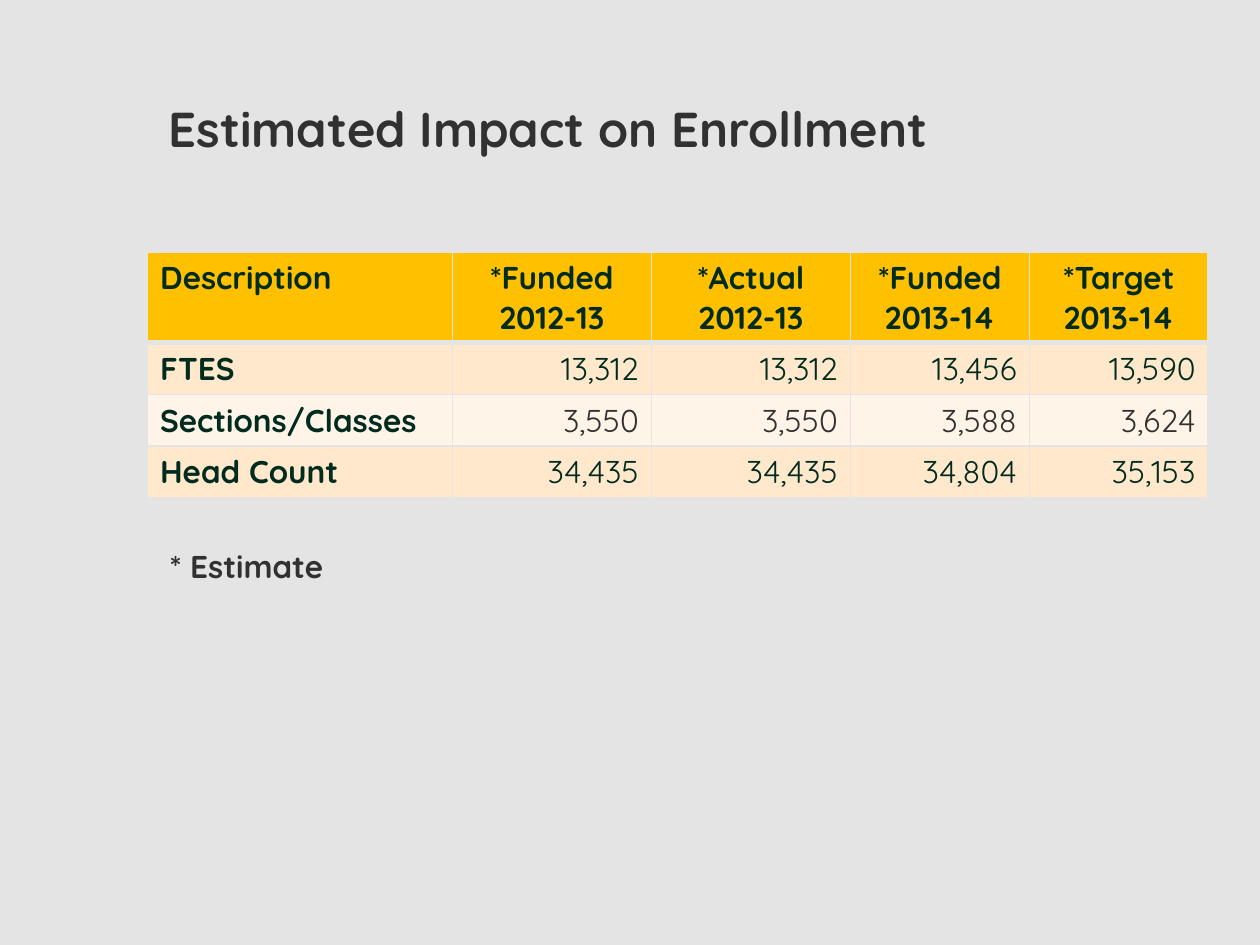
from dataclasses import dataclass

import lxml.etree
import pptx
import pptx.dml.color
import pptx.enum.text
import pptx.oxml.ns
import pptx.util

Inches = pptx.util.Inches
ALIGN = pptx.enum.text.PP_ALIGN

FONT = "Quicksand"
BACKGROUND = "E4E4E4"
GREY = "313131"
GREEN = "012B1E"
HEADER_FILL = "FFC000"
HEADER_HEIGHT = 0.72
ROW_HEIGHT = 0.41
COLUMN_WIDTHS = (2.42, 1.58, 1.58, 1.42, 1.42)


@dataclass
class EnrollmentRow:
    description: str
    counts: tuple[str, ...]
    fill: str
    count_color: str = GREEN


HEADINGS = ("Description", "*Funded\n2012-13", "*Actual\n2012-13",
            "*Funded\n2013-14", "*Target\n2013-14")
ENROLLMENT = (
    EnrollmentRow("FTES", ("13,312", "13,312", "13,456", "13,590"), "FFE8CC"),
    EnrollmentRow("Sections/Classes", ("3,550", "3,550", "3,588", "3,624"), "FFF4E7", GREY),
    EnrollmentRow("Head Count", ("34,435", "34,435", "34,804", "35,153"), "FFE8CC"),
)


def rgb(color: str) -> pptx.dml.color.RGBColor:
    return pptx.dml.color.RGBColor.from_string(color)


def write_text(frame, text: str, *, size: float = 18, color: str = GREEN,
               bold: bool = True, align=ALIGN.LEFT) -> None:
    """Put one paragraph per line of text into the frame."""
    frame.text = text
    for paragraph in frame.paragraphs:
        paragraph.alignment = align
        font = paragraph.runs[0].font
        font.name, font.size, font.bold = FONT, pptx.util.Pt(size), bold
        font.color.rgb = rgb(color)


def add_label(slide, text: str, left: float, top: float, width: float,
              height: float, **text_format) -> None:
    frame = slide.shapes.add_textbox(
        Inches(left), Inches(top), Inches(width), Inches(height)).text_frame
    frame.word_wrap = True
    frame.vertical_anchor = pptx.enum.text.MSO_ANCHOR.MIDDLE
    write_text(frame, text, **text_format)


def add_borders(cell, top: float = 1, bottom: float = 1) -> None:
    """Draw cell borders in the background colour; widths are in points."""
    qn = pptx.oxml.ns.qn
    properties = cell._tc.get_or_add_tcPr()
    for side, width in (("L", 1), ("R", 1), ("T", top), ("B", bottom)):
        line = lxml.etree.SubElement(properties, qn(f"a:ln{side}"), w=str(pptx.util.Pt(width)))
        fill = lxml.etree.SubElement(line, qn("a:solidFill"))
        lxml.etree.SubElement(fill, qn("a:srgbClr"), val=BACKGROUND)


def fill_cell(cell, text: str, fill: str, *, top: float = 1, bottom: float = 1,
              **text_format) -> None:
    add_borders(cell, top, bottom)
    cell.fill.solid()
    cell.fill.fore_color.rgb = rgb(fill)
    write_text(cell.text_frame, text, **text_format)


def add_enrollment_table(slide) -> None:
    table = slide.shapes.add_table(
        len(ENROLLMENT) + 1, len(HEADINGS), Inches(1.17), Inches(2),
        Inches(sum(COLUMN_WIDTHS)),
        Inches(HEADER_HEIGHT + ROW_HEIGHT * len(ENROLLMENT))).table
    for column, width in zip(table.columns, COLUMN_WIDTHS):
        column.width = Inches(width)
    for index, row in enumerate(table.rows):
        row.height = Inches(ROW_HEIGHT if index else HEADER_HEIGHT)

    # Header row
    for column, heading in enumerate(HEADINGS):
        fill_cell(table.cell(0, column), heading, HEADER_FILL, bottom=3,
                  align=ALIGN.CENTER if column else ALIGN.LEFT)

    # Enrollment figures
    for index, row in enumerate(ENROLLMENT, start=1):
        top = 3 if index == 1 else 1
        fill_cell(table.cell(index, 0), row.description, row.fill, top=top)
        for column, count in enumerate(row.counts, start=1):
            fill_cell(table.cell(index, column), count, row.fill, top=top,
                      color=row.count_color, bold=False, align=ALIGN.RIGHT)


def main() -> None:
    presentation = pptx.Presentation()
    presentation.slide_width = Inches(10)
    presentation.slide_height = Inches(7.5)
    slide = presentation.slides.add_slide(presentation.slide_layouts[6])
    slide.background.fill.solid()
    slide.background.fill.fore_color.rgb = rgb(BACKGROUND)

    # Title, table and footnote
    add_label(slide, "Estimated Impact on Enrollment", 1.24, 0.45, 8.34, 1.13,
              size=28, color=GREY)
    add_enrollment_table(slide)
    add_label(slide, "* Estimate", 1.25, 4.08, 2.17, 0.83, color=GREY)

    presentation.save("out.pptx")


if __name__ == "__main__":
    main()
